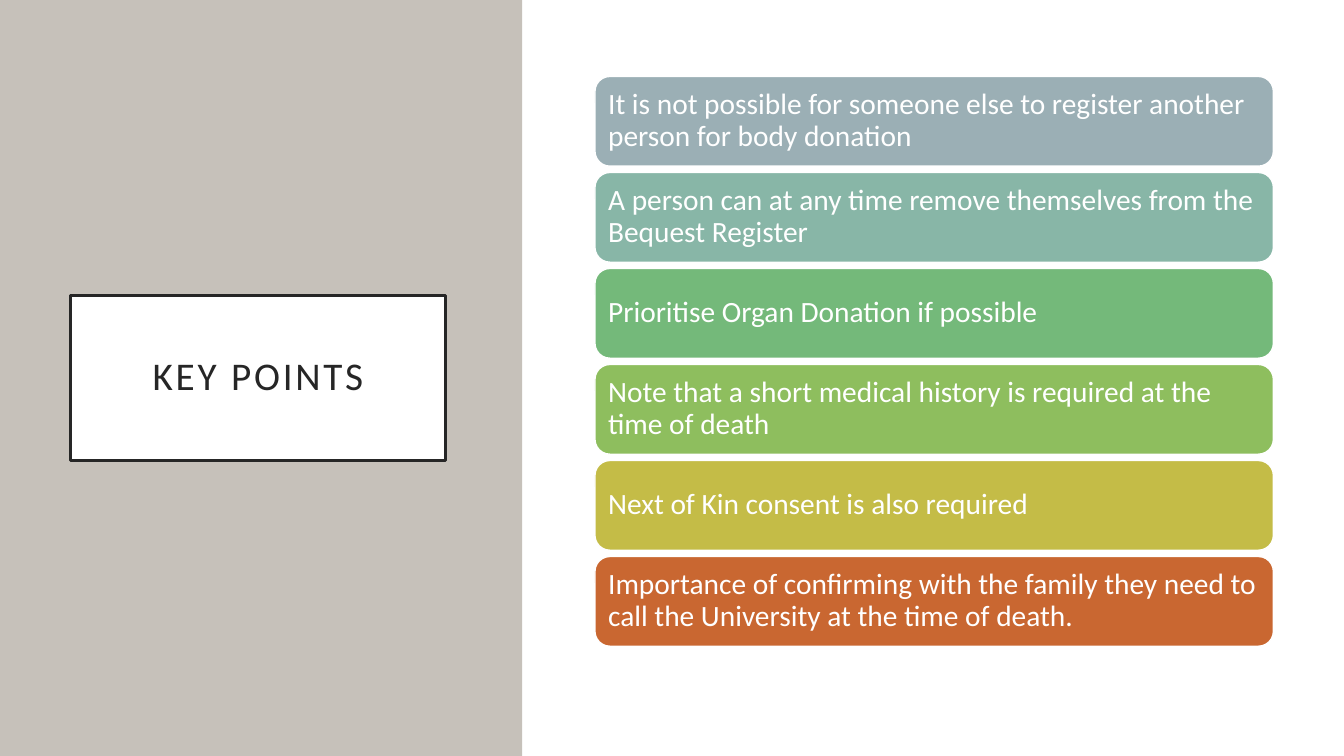
from pptx import Presentation
from pptx.dml.color import RGBColor
from pptx.enum.shapes import MSO_SHAPE
from pptx.enum.text import MSO_ANCHOR, PP_ALIGN
from pptx.util import Pt

RECT = MSO_SHAPE.RECTANGLE
ROUNDED = MSO_SHAPE.ROUNDED_RECTANGLE
MIDDLE = MSO_ANCHOR.MIDDLE
LEFT, CENTER = PP_ALIGN.LEFT, PP_ALIGN.CENTER

FONT = "Calibri"
COLORS = {
    "panel": "C6C1BA",
    "white": "FFFFFF",
    "ink": "262626",
    "slate": "9BAFB5",
    "teal": "88B6A7",
    "green": "74B97A",
    "lime": "8EBE5E",
    "mustard": "C4BC47",
    "rust": "C96731",
}
KEY_POINTS = [
    ("slate", "It is not possible for someone else to register another person for body donation"),
    ("teal", "A person can at any time remove themselves from the Bequest Register"),
    ("green", "Prioritise Organ Donation if possible"),
    ("lime", "Note that a short medical history is required at the time of death"),
    ("mustard", "Next of Kin consent is also required"),
    ("rust", "Importance of confirming with the family they need to call the University at the time of death."),
]

# Stack of key points, in points
BAR_LEFT, BAR_TOP = 425, 54.6
BAR_WIDTH, BAR_HEIGHT = 484.6, 64.1
BAR_PITCH = 68.58


def rgb(name):
    return RGBColor.from_string(COLORS[name])


def add_box(s, kind, left, top, width, height, fill, line=None, line_width=1):
    sp = s.shapes.add_shape(kind, Pt(left), Pt(top), Pt(width), Pt(height))
    sp.shadow.inherit = False
    sp.fill.solid()
    sp.fill.fore_color.rgb = rgb(fill)
    if line:
        sp.line.color.rgb = rgb(line)
        sp.line.width = Pt(line_width)
    else:
        sp.line.fill.background()
    return sp


def write_text(sp, text, size, color, align, inset, spacing=0):
    tf = sp.text_frame
    tf.word_wrap = True
    tf.vertical_anchor = MIDDLE
    tf.margin_left = tf.margin_right = Pt(inset)
    tf.margin_top = tf.margin_bottom = Pt(inset)
    tf.text = text
    p = tf.paragraphs[0]
    p.alignment = align
    p.line_spacing = 0.9
    r = p.runs[0]
    r.font.name = FONT
    r.font.size = Pt(size)
    r.font.color.rgb = rgb(color)
    if spacing:
        # Letter spacing is stored in hundredths of a point
        r.font._element.set("spc", str(spacing * 100))


def main():
    prs = Presentation()
    prs.slide_width, prs.slide_height = Pt(960), Pt(540)
    s = prs.slides.add_slide(prs.slide_layouts[6])

    # Left panel with the framed title
    add_box(s, RECT, 0, 0, 373, 540, "panel")
    title = add_box(s, RECT, 50.4, 211, 267.8, 118.1, "white", "ink", 2.5)
    write_text(title, "KEY POINTS", 28, "ink", CENTER, 14.4, spacing=2)

    # Key points
    for i, (color, text) in enumerate(KEY_POINTS):
        bar = add_box(s, ROUNDED, BAR_LEFT, BAR_TOP + i * BAR_PITCH,
                      BAR_WIDTH, BAR_HEIGHT, color, "white")
        write_text(bar, text, 21, "white", LEFT, 6.3)

    prs.save("out.pptx")


if __name__ == "__main__":
    main()
